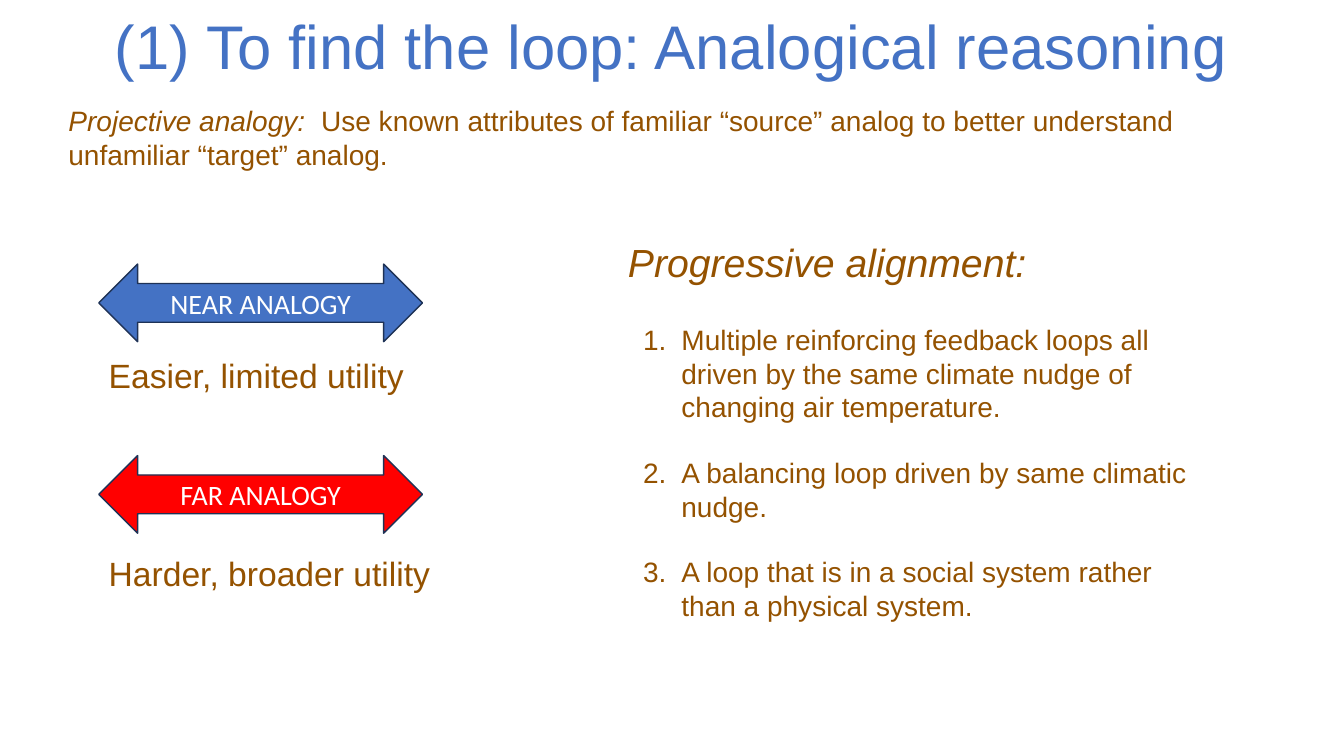
"""Build the slide on analogical reasoning."""
from dataclasses import dataclass

from lxml.etree import SubElement
from pptx import Presentation
from pptx.dml.color import RGBColor
from pptx.enum.shapes import MSO_SHAPE as Preset
from pptx.enum.text import MSO_ANCHOR as Anchor, PP_ALIGN as Align
from pptx.oxml.ns import qn
from pptx.util import Inches, Pt


@dataclass(frozen=True)
class Theme:
    """Colours, fonts and type sizes of the slide."""
    blue: str = "4472C4"
    red: str = "FF0000"
    brown: str = "945200"
    white: str = "FFFFFF"
    outline: str = "1E3256"
    font: str = "Arial"
    arrow_font: str = "Calibri"
    title: int = 44
    heading: int = 28
    caption: int = 24
    body: int = 20


THEME = Theme()
STEPS = (
    "Multiple reinforcing feedback loops all driven by the same climate nudge of changing air temperature.",
    "A balancing loop driven by same climatic nudge.",
    "A loop that is in a social system rather than a physical system.",
)
ANALOGIES = (
    ("NEAR ANALOGY", THEME.blue, 2.62, "Easier, limited utility", 3.47),
    ("FAR ANALOGY", THEME.red, 4.52, "Harder, broader utility", 5.44),
)


def format_run(run, size, color=THEME.brown, font=THEME.font, italic=False):
    """Set the font of one run."""
    run.font.name = font
    run.font.size = Pt(size)
    run.font.italic = italic
    run.font.color.rgb = RGBColor.from_string(color)


def add_text(slide, box, text, size, color=THEME.brown, italic=False, align=Align.LEFT):
    """Add a wrapping text box and return its text frame."""
    text_frame = slide.shapes.add_textbox(*map(Inches, box)).text_frame
    text_frame.word_wrap = True
    text_frame.text = text
    for paragraph in text_frame.paragraphs:
        paragraph.alignment = align
        for run in paragraph.runs:
            format_run(run, size, color, italic=italic)
    return text_frame


def add_definition(slide, box, term, meaning):
    """Add an italic term followed by its upright meaning."""
    text_frame = add_text(slide, box, term, THEME.body, italic=True)
    run = text_frame.paragraphs[0].add_run()
    run.text = meaning
    format_run(run, THEME.body)


def add_numbered_list(slide, box, items):
    """Add a numbered list with a hanging indent and a line between items."""
    text_frame = add_text(slide, box, "\n".join(items), THEME.body)
    for paragraph in text_frame.paragraphs:
        paragraph.space_after = Pt(23)
        properties = paragraph._p.get_or_add_pPr()
        properties.set("marL", str(Inches(0.38)))
        properties.set("indent", str(-Inches(0.38)))
        SubElement(properties, qn("a:buFont"), typeface=THEME.font)
        SubElement(properties, qn("a:buAutoNum"), type="arabicPeriod")


def add_double_arrow(slide, box, label, color):
    """Add a labelled two-headed arrow."""
    arrow = slide.shapes.add_shape(Preset.LEFT_RIGHT_ARROW, *map(Inches, box))
    arrow.shadow.inherit = False
    arrow.fill.solid()
    arrow.fill.fore_color.rgb = RGBColor.from_string(color)
    arrow.line.color.rgb = RGBColor.from_string(THEME.outline)
    arrow.line.width = Pt(1)
    text_frame = arrow.text_frame
    text_frame.text = label
    text_frame.vertical_anchor = Anchor.MIDDLE
    paragraph = text_frame.paragraphs[0]
    paragraph.alignment = Align.CENTER
    format_run(paragraph.runs[0], THEME.body, THEME.white, THEME.arrow_font)


def main():
    """Build and save the presentation."""
    presentation = Presentation()
    presentation.slide_width = Inches(13.33)
    presentation.slide_height = Inches(7.5)
    slide = presentation.slides.add_slide(presentation.slide_layouts[6])

    for label, color, arrow_top, caption, caption_top in ANALOGIES:
        add_double_arrow(slide, (0.98, arrow_top, 3.21, 0.77), label, color)
        add_text(slide, (0.98, caption_top, 3.67, 0.5), caption, THEME.caption)
    add_definition(
        slide, (0.58, 0.98, 11.89, 0.77), "Projective analogy:  ",
        "Use known attributes of familiar “source” analog to better understand unfamiliar “target” analog.",
    )
    add_text(slide, (6.13, 2.32, 5.81, 0.57), "Progressive alignment:", THEME.heading, italic=True)
    add_numbered_list(slide, (6.28, 3.15, 5.81, 3.13), STEPS)
    add_text(
        slide, (0.24, 0.03, 12.84, 1.18), "(1) To find the loop: Analogical reasoning",
        THEME.title, THEME.blue, align=Align.CENTER,
    )
    presentation.save("out.pptx")


if __name__ == "__main__":
    main()
